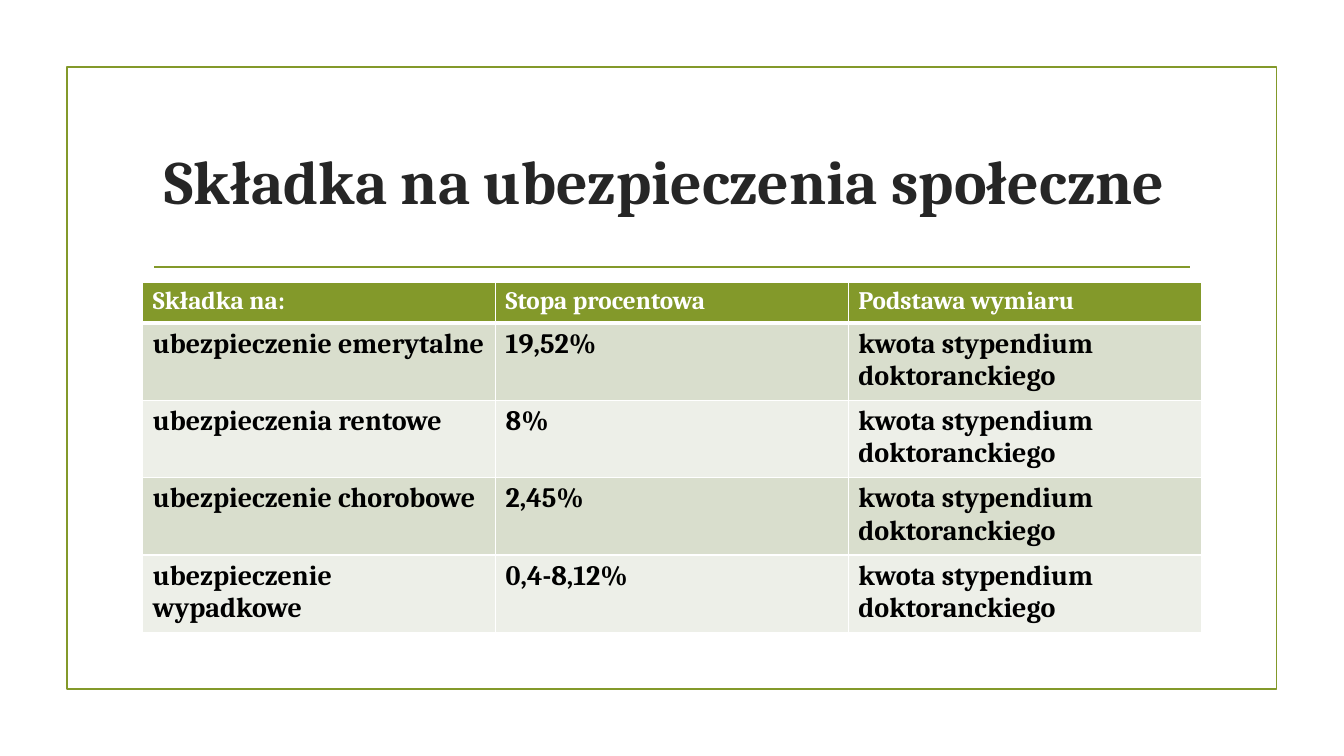
from dataclasses import dataclass

from lxml.etree import SubElement
from pptx import Presentation
from pptx.dml.color import RGBColor
from pptx.enum.shapes import MSO_CONNECTOR as Connector, MSO_SHAPE as Preset
from pptx.enum.text import MSO_ANCHOR as Anchor, PP_ALIGN as Align
from pptx.oxml import parse_xml
from pptx.oxml.ns import nsdecls, qn
from pptx.slide import Slide
from pptx.table import _Cell as Cell
from pptx.text.text import TextFrame
from pptx.util import Cm, Pt


@dataclass(frozen=True)
class Theme:
    font: str = "Cambria"
    green: str = "83992A"
    title_color: str = "262626"
    white: str = "FFFFFF"
    black: str = "000000"
    bands: tuple[str, str] = ("D9DECD", "EDEFE8")
    title_size: int = 44
    header_size: int = 18
    body_size: int = 20
    line_width: float = 1.25
    border_width: int = 1
    header_border_width: int = 3


@dataclass(frozen=True)
class Contribution:
    name: str
    rate: str
    basis: str = "kwota stypendium doktoranckiego"


@dataclass(frozen=True)
class RowStyle:
    fill: str
    color: str
    size: int
    top_border: int
    bottom_border: int


THEME = Theme()
TITLE = "Składka na ubezpieczenia społeczne "
HEADER = ("Składka na:", "Stopa procentowa", "Podstawa wymiaru")
CONTRIBUTIONS = (
    Contribution("ubezpieczenie emerytalne", "19,52%"),
    Contribution("ubezpieczenia rentowe", "8%"),
    Contribution("ubezpieczenie chorobowe", "2,45%"),
    Contribution("ubezpieczenie wypadkowe", "0,4-8,12%"),
)
CONTENT_LEFT, CONTENT_WIDTH = Cm(3.6), Cm(26.67)
HEADER_HEIGHT, BODY_HEIGHT = Cm(1.03), Cm(1.87)


def rgb(color: str) -> RGBColor:
    return RGBColor.from_string(color)


def format_text(frame: TextFrame, size: int, color: str) -> None:
    for paragraph in frame.paragraphs:
        for run in paragraph.runs:
            run.font.name = THEME.font
            run.font.size = Pt(size)
            run.font.bold = True
            run.font.color.rgb = rgb(color)


def add_frame(slide: Slide) -> None:
    frame = slide.shapes.add_shape(
        Preset.RECTANGLE, Cm(1.69), Cm(1.69), Cm(30.48), Cm(15.68)
    )
    frame.shadow.inherit = False
    frame.fill.background()
    frame.line.color.rgb = rgb(THEME.green)
    frame.line.width = Pt(THEME.line_width)


def add_title_rule(slide: Slide) -> None:
    rule = slide.shapes.add_connector(
        Connector.STRAIGHT, Cm(3.89), Cm(6.73), Cm(30), Cm(6.73)
    )
    rule.line.color.rgb = rgb(THEME.green)
    rule.line.width = Pt(THEME.line_width)
    SubElement(rule._element.spPr, qn("a:effectLst"))


def add_title(slide: Slide) -> None:
    box = slide.shapes.add_textbox(CONTENT_LEFT, Cm(2.72), CONTENT_WIDTH, Cm(3.63))
    frame = box.text_frame
    frame.word_wrap = True
    frame.vertical_anchor = Anchor.MIDDLE
    frame.text = TITLE
    frame.paragraphs[0].alignment = Align.CENTER
    format_text(frame, THEME.title_size, THEME.title_color)


def set_borders(cell: Cell, top: int, bottom: int) -> None:
    """Put white borders ahead of the cell's fill, as the schema requires."""
    side = THEME.border_width
    widths = {"lnL": side, "lnR": side, "lnT": top, "lnB": bottom}
    properties = cell._tc.get_or_add_tcPr()
    for position, (tag, width) in enumerate(widths.items()):
        border = parse_xml(
            f'<a:{tag} {nsdecls("a")} w="{Pt(width)}"><a:solidFill>'
            f'<a:srgbClr val="{THEME.white}"/></a:solidFill></a:{tag}>'
        )
        properties.insert(position, border)


def fill_cell(cell: Cell, text: str, style: RowStyle) -> None:
    cell.text_frame.text = text
    format_text(cell.text_frame, style.size, style.color)
    cell.fill.solid()
    cell.fill.fore_color.rgb = rgb(style.fill)
    set_borders(cell, style.top_border, style.bottom_border)


def row_style(index: int) -> RowStyle:
    thin, thick = THEME.border_width, THEME.header_border_width
    if index == 0:
        return RowStyle(THEME.green, THEME.white, THEME.header_size, thin, thick)
    top = thick if index == 1 else thin
    band = THEME.bands[(index - 1) % 2]
    return RowStyle(band, THEME.black, THEME.body_size, top, thin)


def add_contribution_table(slide: Slide) -> None:
    rows = [HEADER, *((item.name, item.rate, item.basis) for item in CONTRIBUTIONS)]
    height = HEADER_HEIGHT + BODY_HEIGHT * len(CONTRIBUTIONS)
    table = slide.shapes.add_table(
        len(rows), len(HEADER), CONTENT_LEFT, Cm(7.11), CONTENT_WIDTH, height
    ).table
    for index, texts in enumerate(rows):
        table.rows[index].height = BODY_HEIGHT if index else HEADER_HEIGHT
        for column, text in enumerate(texts):
            fill_cell(table.cell(index, column), text, row_style(index))


def main() -> None:
    presentation = Presentation()
    presentation.slide_width = Cm(33.87)
    presentation.slide_height = Cm(19.05)
    slide = presentation.slides.add_slide(presentation.slide_layouts[6])
    add_frame(slide)
    add_title_rule(slide)
    add_title(slide)
    add_contribution_table(slide)
    presentation.save("out.pptx")


if __name__ == "__main__":
    main()
